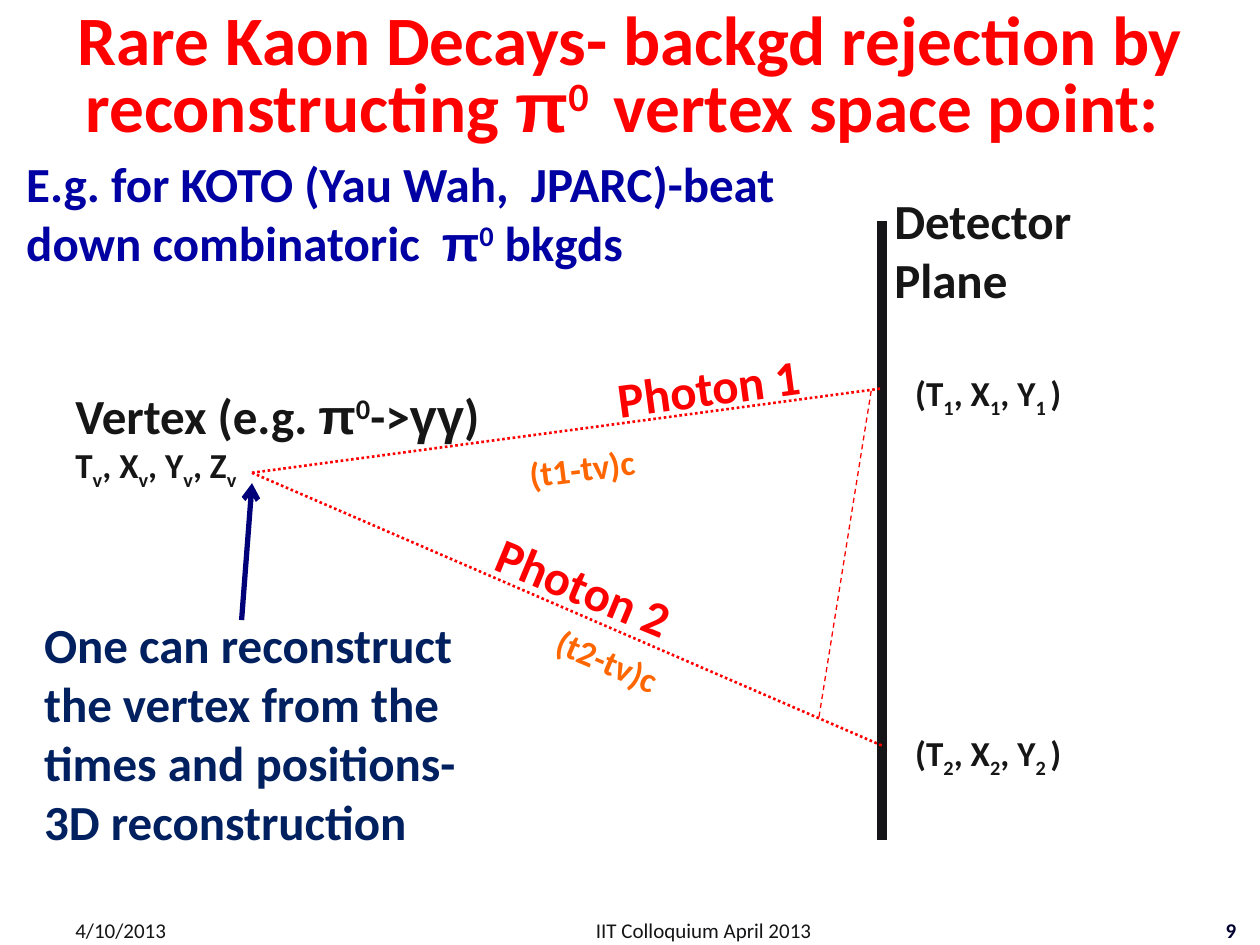
from dataclasses import dataclass
from typing import Optional

from lxml.etree import SubElement
from pptx import Presentation
from pptx.dml.color import RGBColor
from pptx.enum.dml import MSO_LINE_DASH_STYLE as Dash
from pptx.enum.shapes import MSO_CONNECTOR as Connector
from pptx.enum.text import MSO_ANCHOR as Anchor, PP_ALIGN as Align
from pptx.oxml.ns import qn
from pptx.util import Cm, Pt

COLORS = {
    "ink": "161616", "plane": "151517", "red": "FF0000", "orange": "FF6600",
    "navy": "002060", "arrow": "000079", "blue": "0000A3", "number": "000030",
}
SUBSCRIPT, SUPERSCRIPT = -25000, 30000


@dataclass
class Span:
    text: str
    baseline: int = 0
    face: str = "Calibri"
    size: Optional[float] = None


@dataclass
class TextBox:
    """A text box in cm; each paragraph is a list of spans."""
    left: float
    top: float
    width: float
    height: float
    paragraphs: list[list[Span]]
    color: str
    size: float = 28
    bold: bool = True
    rotation: float = 0
    anchor: Anchor = Anchor.TOP
    align: Align = Align.LEFT
    spacing: float = 1


@dataclass
class Line:
    """A straight line between two points in cm."""
    start: tuple[float, float]
    end: tuple[float, float]
    color: str
    width: float
    dash: Optional[Dash] = None
    arrow: bool = False


def indexed(letters: str, index: str, size: Optional[float] = None) -> list[Span]:
    """Comma-separated letters, each followed by the same subscript."""
    spans = []
    for position, letter in enumerate(letters):
        spans.append(Span((", " if position else "") + letter, size=size))
        spans.append(Span(index, SUBSCRIPT, size=size))
    return spans


def pion() -> list[Span]:
    return [Span("π", face="Arial"), Span("0", SUPERSCRIPT)]


def hit_label(top: float, index: str) -> TextBox:
    spans = [Span("("), *indexed("TXY", index), Span(" ", SUBSCRIPT), Span(")")]
    return TextBox(18.2, top, 6.14, 1.11, [spans], "ink", 20)


def ray_label(text: str, left: float, top: float, width: float, height: float,
              rotation: float, color: str, size: float) -> TextBox:
    return TextBox(left, top, width, height, [[Span(text)]], color, size, rotation=rotation)


def footer(text: str, left: float, width: float, align: Align,
           color: str = "plane", bold: bool = False) -> TextBox:
    return TextBox(left, 18.24, width, 1.02, [[Span(text)]], color, 12, bold,
                   anchor=Anchor.MIDDLE, align=align)


def draw_text(page, item: TextBox) -> None:
    box = page.shapes.add_textbox(*map(Cm, (item.left, item.top, item.width, item.height)))
    box.rotation = item.rotation
    frame = box.text_frame
    frame.word_wrap = True
    frame.vertical_anchor = item.anchor
    for number, spans in enumerate(item.paragraphs):
        para = frame.add_paragraph() if number else frame.paragraphs[0]
        para.alignment = item.align
        para.line_spacing = item.spacing
        for span in spans:
            run = para.add_run()
            run.text = span.text
            formats = {"name": span.face, "size": Pt(span.size or item.size), "bold": item.bold}
            for name, value in formats.items():
                setattr(run.font, name, value)
            run.font.color.rgb = RGBColor.from_string(COLORS[item.color])
            if span.baseline:
                run._r.get_or_add_rPr().set("baseline", str(span.baseline))


def draw_line(page, item: Line) -> None:
    connector = page.shapes.add_connector(
        Connector.STRAIGHT, *map(Cm, (*item.start, *item.end)))
    connector.line.color.rgb = RGBColor.from_string(COLORS[item.color])
    connector.line.width = Pt(item.width)
    if item.dash:
        connector.line.dash_style = item.dash
    if item.arrow:
        SubElement(connector.line._get_or_add_ln(), qn("a:tailEnd"), type="arrow")
    SubElement(connector._element.spPr, qn("a:effectLst"))


VERTEX = (5.08, 9.53)
PLANE_X = 17.78
HIT_1 = (PLANE_X, 7.83)
HIT_2 = (PLANE_X, 15.03)

LINES = [
    Line((PLANE_X, 4.45), (PLANE_X, 16.93), "plane", 6),
    Line(VERTEX, HIT_1, "red", 1.5, Dash.ROUND_DOT),
    Line(VERTEX, HIT_2, "red", 1.5, Dash.ROUND_DOT),
    Line((16.51, 14.45), (17.57, 7.83), "red", 0.75, Dash.DASH),
    Line((4.87, 12.5), (5.08, 9.74), "arrow", 3, arrow=True),
]

TEXTS = [
    hit_label(7.37, "1"),
    hit_label(14.63, "2"),
    TextBox(1.27, 7.64, 9.73, 2.31, [
        [Span("Vertex (e.g. "), *pion(), Span("->"), Span("γγ", face="Arial"), Span(")")],
        indexed("TXYZ", "v", 20),
    ], "ink"),
    ray_label("Photon 1", 12.19, 7.07, 4.3, 1.45, 352.3, "red", 28),
    ray_label("Photon 2", 9.45, 11.07, 4.3, 2.64, 22.5, "red", 28),
    ray_label("(t1-tv)c", 10.41, 8.84, 3.3, 1.11, 352.8, "orange", 20),
    ray_label("(t2-tv)c", 10.9, 12.9, 3.3, 1.11, 23.1, "orange", 20),
    TextBox(PLANE_X, 3.71, 6.14, 2.64, [[Span("Detector Plane")]], "ink"),
    TextBox(0.64, 12.27, 9.37, 5.05, [[Span(
        "One can reconstruct the vertex from the times and positions- 3D reconstruction",
    )]], "navy"),
    footer("IIT Colloquium April 2013", 10.16, 8.05, Align.CENTER),
    footer("9", 19.25, 5.92, Align.RIGHT, "number", True),
    footer("4/10/2013", 1.27, 5.92, Align.LEFT),
    TextBox(0.64, 0, 24.13, 3.18, [[
        Span("Rare Kaon Decays- backgd rejection by reconstructing "), *pion(),
        Span(" ", SUPERSCRIPT), Span(" vertex space point: "),
    ]], "red", 39.6, anchor=Anchor.MIDDLE, align=Align.CENTER, spacing=0.8),
    TextBox(0.28, 2.97, 17.27, 2.64, [[
        Span("E.g. for KOTO (Yau Wah,  JPARC)-beat down combinatoric  "), *pion(),
        Span(" bkgds"),
    ]], "blue"),
]


def main() -> None:
    deck = Presentation()
    deck.slide_width, deck.slide_height = Cm(25.4), Cm(19.05)
    page = deck.slides.add_slide(deck.slide_layouts[6])
    for line in LINES:
        draw_line(page, line)
    for text in TEXTS:
        draw_text(page, text)
    deck.save("out.pptx")


if __name__ == "__main__":
    main()
